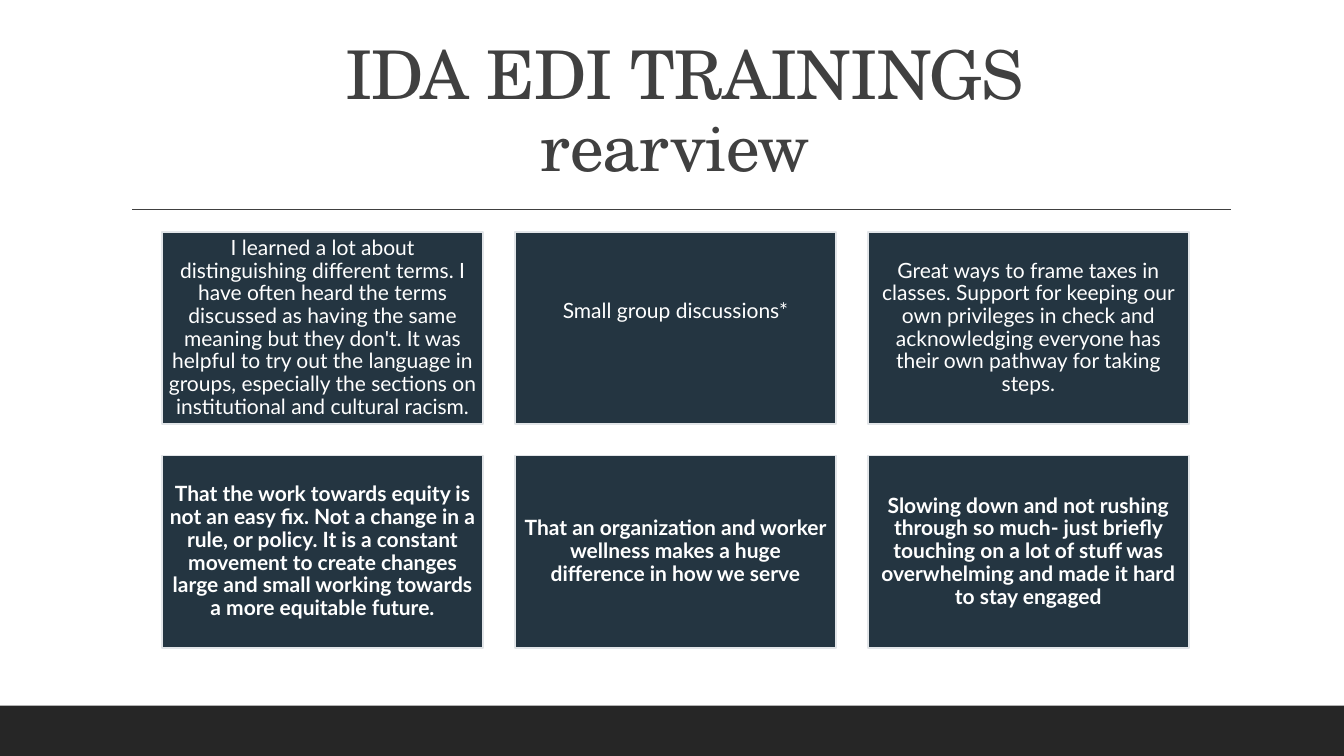
from pptx import Presentation
from pptx.dml.color import RGBColor
from pptx.enum.shapes import MSO_CONNECTOR, MSO_SHAPE
from pptx.enum.text import MSO_ANCHOR, MSO_AUTO_SIZE, PP_ALIGN
from pptx.oxml.ns import qn
from pptx.util import Inches, Pt
from lxml import etree

# Content
TITLE_LINES = [" IDA EDI TRAININGS", "rearview"]
# Each row: bold flag, then (comment, bottom inset) pairs
COMMENT_ROWS = [
    (False, [
        ("I learned a lot about distinguishing different terms. I have often heard "
         "the terms discussed as having the same meaning but they don't. It was "
         "helpful to try out the language in groups, especially the sections on "
         "institutional and cultural racism.", 0.06),
        ("Small group discussions*", 0.38),
        ("Great ways to frame taxes in classes. Support for keeping our own "
         "privileges in check and acknowledging everyone has their own pathway "
         "for taking steps.", 0.06),
    ]),
    (True, [
        ("That the work towards equity is not an easy fix. Not a change in a rule, "
         "or policy. It is a constant movement to create changes large and small "
         "working towards a more equitable future.", 0.06),
        ("That an organization and worker wellness makes a huge difference in how "
         "we serve", 0.06),
        ("Slowing down and not rushing through so much- just briefly touching on a "
         "lot of stuff was overwhelming and made it hard to stay engaged", 0.06),
    ]),
]

# Layout and colours
CARD_LEFT, CARD_TOP = 1.61, 2.3
CARD_WIDTH, CARD_HEIGHT = 3.18, 1.91
COLUMN_STEP, ROW_STEP = 3.5, 2.22
INSET = 0.06
NAVY, CARD_EDGE, WHITE = "243541", "E2E5E8", "FFFFFF"
TITLE_GREY, FOOTER_GREY = "404040", "262626"


def color(hex_string):
    return RGBColor.from_string(hex_string)


def add_box(slide, left, top, width, height, fill):
    shape = slide.shapes.add_shape(MSO_SHAPE.RECTANGLE, Inches(left), Inches(top),
                                   Inches(width), Inches(height))
    shape.shadow.inherit = False
    shape.fill.solid()
    shape.fill.fore_color.rgb = color(fill)
    shape.line.fill.background()
    return shape


def add_run(paragraph, text, font_name, size, hex_color, bold=False):
    run = paragraph.add_run()
    run.text = text
    run.font.name = font_name
    run.font.size = Pt(size)
    run.font.bold = bold
    run.font.color.rgb = color(hex_color)
    return run


def add_title(slide):
    title = slide.shapes.title
    title.left, title.top = Inches(1.2), Inches(0.31)
    title.width, title.height = Inches(11), Inches(1.59)
    frame = title.text_frame
    frame.word_wrap = True
    frame.auto_size = MSO_AUTO_SIZE.NONE
    frame.vertical_anchor = MSO_ANCHOR.BOTTOM
    paragraph = frame.paragraphs[0]
    paragraph.alignment = PP_ALIGN.CENTER
    paragraph.line_spacing = 0.9
    for index, line in enumerate(TITLE_LINES):
        if index:
            paragraph.add_line_break()
        run = add_run(paragraph, line, "TeX Gyre Schola", 48, TITLE_GREY)
        run.font._element.set("spc", "-50")


def add_rule(slide):
    rule = slide.shapes.add_connector(MSO_CONNECTOR.STRAIGHT, Inches(1.31), Inches(2.08),
                                      Inches(12.21), Inches(2.08))
    rule.line.color.rgb = color(TITLE_GREY)
    rule.line.width = Pt(1)
    etree.SubElement(rule._element.spPr, qn("a:effectLst"))


def add_card(slide, left, top, text, bottom_inset, bold):
    card = add_box(slide, left, top, CARD_WIDTH, CARD_HEIGHT, NAVY)
    card.line.color.rgb = color(CARD_EDGE)
    card.line.width = Pt(1.25)
    frame = card.text_frame
    frame.word_wrap = True
    frame.vertical_anchor = MSO_ANCHOR.MIDDLE
    frame.margin_left = frame.margin_right = frame.margin_top = Inches(INSET)
    frame.margin_bottom = Inches(bottom_inset)
    paragraph = frame.paragraphs[0]
    paragraph.alignment = PP_ALIGN.CENTER
    paragraph.line_spacing = 0.9
    add_run(paragraph, text, "Lato", 15, WHITE, bold)


def main():
    presentation = Presentation()
    presentation.slide_width = Inches(13.33)
    presentation.slide_height = Inches(7.5)
    slide = presentation.slides.add_slide(presentation.slide_layouts[5])
    slide.background.fill.solid()
    slide.background.fill.fore_color.rgb = color(WHITE)

    # Heading, rule and footer band
    add_title(slide)
    add_rule(slide)
    add_box(slide, 0, 7, 13.33, 0.5, FOOTER_GREY)

    # Grid of comment cards
    for row, (bold, comments) in enumerate(COMMENT_ROWS):
        for column, (text, bottom_inset) in enumerate(comments):
            add_card(slide, CARD_LEFT + column * COLUMN_STEP, CARD_TOP + row * ROW_STEP,
                     text, bottom_inset, bold)

    presentation.save("out.pptx")


if __name__ == "__main__":
    main()
